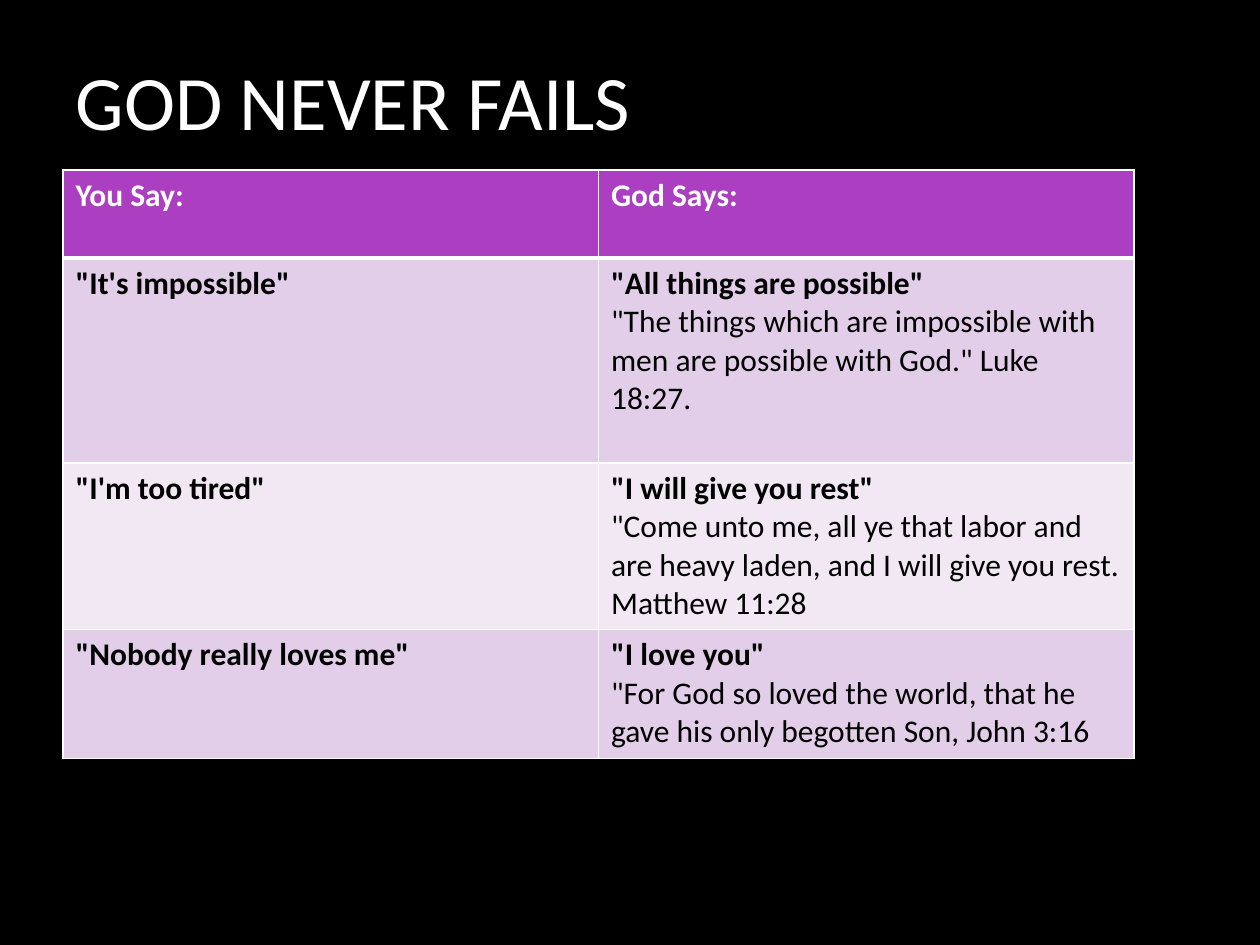
import pptx
import pptx.util
import pptx.dml.color
import pptx.enum.text
import pptx.oxml
import pptx.oxml.ns

COLORS = {
    "background": "000000",
    "light": "FFFFFF",
    "dark": "000000",
    "header": "AC3EC1",
    "odd": "E3CEE9",
    "even": "F1E8F4",
}
FONT = "Calibri"
ROWS = [
    (["You Say:"], ["God Says:"]),
    (
        ['"It\'s impossible"'],
        [
            '"All things are possible"',
            '"The things which are impossible with men are possible with God." Luke 18:27.',
        ],
    ),
    (
        ['"I\'m too tired"'],
        [
            '"I will give you rest"',
            '"Come unto me, all ye that labor and are heavy laden, and I will give you rest. Matthew 11:28',
        ],
    ),
    (
        ['"Nobody really loves me"'],
        [
            '"I love you"',
            '"For God so loved the world, that he gave his only begotten Son, John 3:16',
        ],
    ),
]
ROW_SHARES = [0.15, 0.35, 0.28, 0.22]


def rgb(name):
    return pptx.dml.color.RGBColor.from_string(COLORS[name])


def write(p, text, size=18, color="dark", bold=False):
    p.alignment = pptx.enum.text.PP_ALIGN.LEFT
    r = p.add_run()
    r.text = text
    r.font.name = FONT
    r.font.size = pptx.util.Pt(size)
    r.font.bold = bold
    r.font.color.rgb = rgb(color)


def set_borders(cell, is_header, is_first):
    tcPr = cell._tc.get_or_add_tcPr()
    widths = {"L": 1, "R": 1, "T": 3 if is_first else 1, "B": 3 if is_header else 1}
    for side, width in widths.items():
        tcPr.append(pptx.oxml.parse_xml(
            f'<a:ln{side} {pptx.oxml.ns.nsdecls("a")} w="{pptx.util.Pt(width)}">'
            f'<a:solidFill><a:srgbClr val="{COLORS["light"]}"/></a:solidFill>'
            f'</a:ln{side}>'
        ))


def add_title(s, box, text):
    sp = s.shapes.title
    sp.left, sp.top, sp.width, sp.height = box
    tf = sp.text_frame
    tf.word_wrap = True
    tf.vertical_anchor = pptx.enum.text.MSO_ANCHOR.MIDDLE
    write(tf.paragraphs[0], text, size=44, color="light")


def add_sayings(s, box, rows):
    width, height = box[2:]
    table = s.shapes.add_table(len(rows), len(rows[0]), *box).table
    for column in table.columns:
        column.width = int(width / len(rows[0]))
    for i, (row, share) in enumerate(zip(rows, ROW_SHARES)):
        table.rows[i].height = int(height * share)
        fill = "header" if i == 0 else "odd" if i % 2 else "even"
        for j, lines in enumerate(row):
            cell = table.cell(i, j)
            set_borders(cell, i == 0, i == 1)
            cell.fill.solid()
            cell.fill.fore_color.rgb = rgb(fill)
            tf = cell.text_frame
            for k, line in enumerate(lines):
                p = tf.paragraphs[0] if k == 0 else tf.add_paragraph()
                write(p, line, color="dark" if i else "light", bold=k == 0)


def main():
    prs = pptx.Presentation()
    prs.slide_width = pptx.util.Inches(10)
    prs.slide_height = pptx.util.Inches(7.5)

    def share(left, top, width, height):
        w, h = prs.slide_width, prs.slide_height
        return int(w * left), int(h * top), int(w * width), int(h * height)

    s = prs.slides.add_slide(prs.slide_layouts[5])
    s.background.fill.solid()
    s.background.fill.fore_color.rgb = rgb("background")
    add_title(s, share(0.05, 0, 0.85, 0.21), "GOD NEVER FAILS")
    add_sayings(s, share(0.05, 0.18, 0.85, 0.62), ROWS)
    prs.save("out.pptx")


if __name__ == "__main__":
    main()
